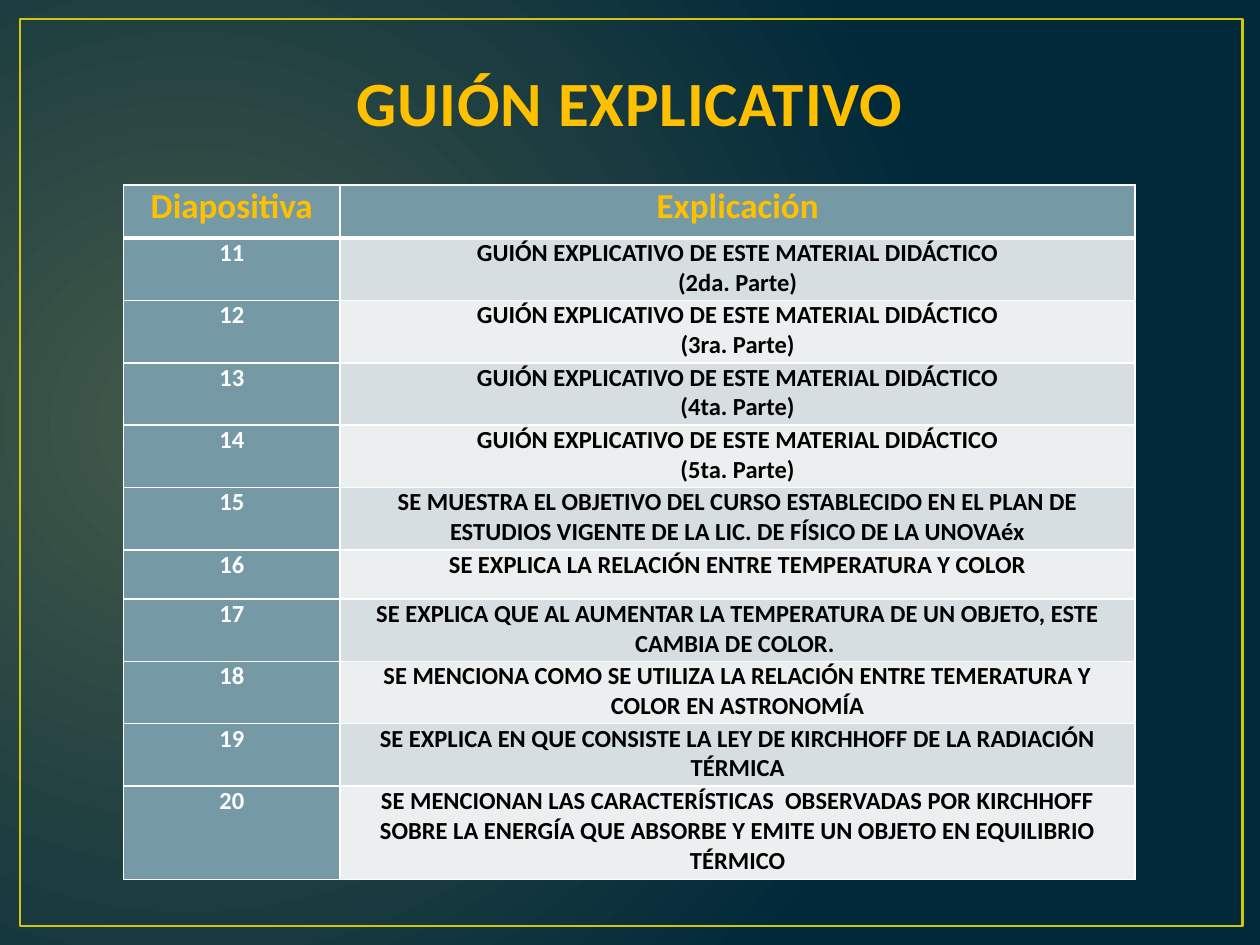
from lxml import etree
from pptx import Presentation
from pptx.dml.color import RGBColor
from pptx.enum.shapes import MSO_SHAPE
from pptx.enum.text import MSO_ANCHOR, PP_ALIGN
from pptx.oxml import parse_xml
from pptx.oxml.ns import qn
from pptx.util import Inches, Pt

NS = 'xmlns:a="http://schemas.openxmlformats.org/drawingml/2006/main"'
GOLD, STEEL, WHITE, BLACK = "FFC000", "759AA5", "FFFFFF", "000000"
BANDS = ("D6DEE1", "ECEFF0")

GUIDE = "GUIÓN EXPLICATIVO DE ESTE MATERIAL DIDÁCTICO"
FIRST_SLIDE = 11
EXPLANATIONS = [
    *[f"{GUIDE}\n({part}. Parte)" for part in ("2da", "3ra", "4ta", "5ta")],
    "SE MUESTRA EL OBJETIVO DEL CURSO ESTABLECIDO EN EL PLAN DE ESTUDIOS "
    "VIGENTE DE LA LIC. DE FÍSICO DE LA UNOVAéx",
    "SE EXPLICA LA RELACIÓN ENTRE TEMPERATURA Y COLOR",
    "SE EXPLICA QUE AL AUMENTAR LA TEMPERATURA DE UN OBJETO, ESTE CAMBIA DE COLOR. ",
    "SE MENCIONA COMO SE UTILIZA LA RELACIÓN ENTRE TEMERATURA Y COLOR EN ASTRONOMÍA",
    "SE EXPLICA EN QUE CONSISTE LA LEY DE KIRCHHOFF DE LA RADIACIÓN TÉRMICA",
    "SE MENCIONAN LAS CARACTERÍSTICAS  OBSERVADAS POR KIRCHHOFF SOBRE LA ENERGÍA "
    "QUE ABSORBE Y EMITE UN OBJETO EN EQUILIBRIO TÉRMICO",
]

# Row heights: header, one-line and three-line rows; two-line rows share the rest
TABLE_HEIGHT = 5.51
HEADER, ONE_LINE, THREE_LINES = 0.42, 0.39, 0.74
TWO_LINES = (TABLE_HEIGHT - HEADER - ONE_LINE - THREE_LINES) / 8
ROW_HEIGHTS = [HEADER] + [TWO_LINES] * 5 + [ONE_LINE] + [TWO_LINES] * 3 + [THREE_LINES]


def rgb(value):
    return RGBColor.from_string(value)


def write(tf, text, size=14, color=BLACK, spacing=None):
    """Fill a text frame with centred bold lines."""
    for i, line in enumerate(text.split("\n")):
        p = tf.paragraphs[0] if i == 0 else tf.add_paragraph()
        p.alignment = PP_ALIGN.CENTER
        r = p.add_run()
        r.text = line
        r.font.name, r.font.size, r.font.bold = "Calibri", Pt(size), True
        r.font.color.rgb = rgb(color)
        if spacing:
            r.font._element.set("spc", str(int(spacing * 100)))


def add_background(s):
    fill = s.background.fill
    fill.gradient()
    for stop, color in zip(fill.gradient_stops, ("445A49", "01293A")):
        stop.color.rgb = rgb(color)
    # Turn the linear gradient into a circular one
    lin = next(s._element.iter(qn("a:lin")))
    lin.getparent().replace(lin, parse_xml(
        f'<a:path {NS} path="circle">'
        '<a:fillToRect l="15000" t="50000" r="85000" b="60000"/></a:path>'))


def add_frame(s):
    sp = s.shapes.add_shape(MSO_SHAPE.RECTANGLE, Inches(0.16), Inches(0.15),
                            Inches(9.7), Inches(7.2))
    sp.shadow.inherit = False
    sp.fill.background()
    sp.line.color.rgb = rgb("CFC60D")
    sp.line.width = Pt(1.5)


def add_title(s, text):
    sp = s.shapes.add_textbox(Inches(0.5), Inches(0.29), Inches(9), Inches(0.86))
    tf = sp.text_frame
    tf.word_wrap = True
    tf.vertical_anchor = MSO_ANCHOR.BOTTOM
    write(tf, text, size=36, color=GOLD, spacing=0.5)


def set_borders(cell, **widths):
    """Draw white cell borders; widths in points by side (L, R, T, B)."""
    tcPr = cell._tc.get_or_add_tcPr()
    for side in "LRTB":
        ln = etree.SubElement(tcPr, qn(f"a:ln{side}"), w=str(Pt(widths.get(side, 1))))
        solid = etree.SubElement(ln, qn("a:solidFill"))
        etree.SubElement(solid, qn("a:srgbClr"), val=WHITE)


def fill_cell(cell, text, fill, borders, **text_format):
    cell.margin_left = cell.margin_right = Inches(0.07)
    cell.margin_top = cell.margin_bottom = 0
    set_borders(cell, **borders)
    cell.fill.solid()
    cell.fill.fore_color.rgb = rgb(fill)
    write(cell.text_frame, text, **text_format)


def add_guide_table(s):
    table = s.shapes.add_table(len(ROW_HEIGHTS), 2, Inches(0.98), Inches(1.47),
                               Inches(8.03), Inches(TABLE_HEIGHT)).table
    for column, width in zip(table.columns, (1.72, 6.31)):
        column.width = Inches(width)
    for row, height in zip(table.rows, ROW_HEIGHTS):
        row.height = Inches(height)

    # Header
    for col, text in enumerate(("Diapositiva", "Explicación")):
        fill_cell(table.cell(0, col), text, STEEL, {"B": 3}, size=20, color=GOLD)

    # Numbered rows with alternating bands
    for i, text in enumerate(EXPLANATIONS):
        borders = {"T": 3} if i == 0 else {}
        fill_cell(table.cell(i + 1, 0), str(FIRST_SLIDE + i), STEEL, borders, color=WHITE)
        fill_cell(table.cell(i + 1, 1), text, BANDS[i % 2], borders)


def main():
    prs = Presentation()
    prs.slide_width, prs.slide_height = Inches(10), Inches(7.5)
    s = prs.slides.add_slide(prs.slide_layouts[6])
    add_background(s)
    add_frame(s)
    add_title(s, "GUIÓN EXPLICATIVO")
    add_guide_table(s)
    prs.save("out.pptx")


if __name__ == "__main__":
    main()
